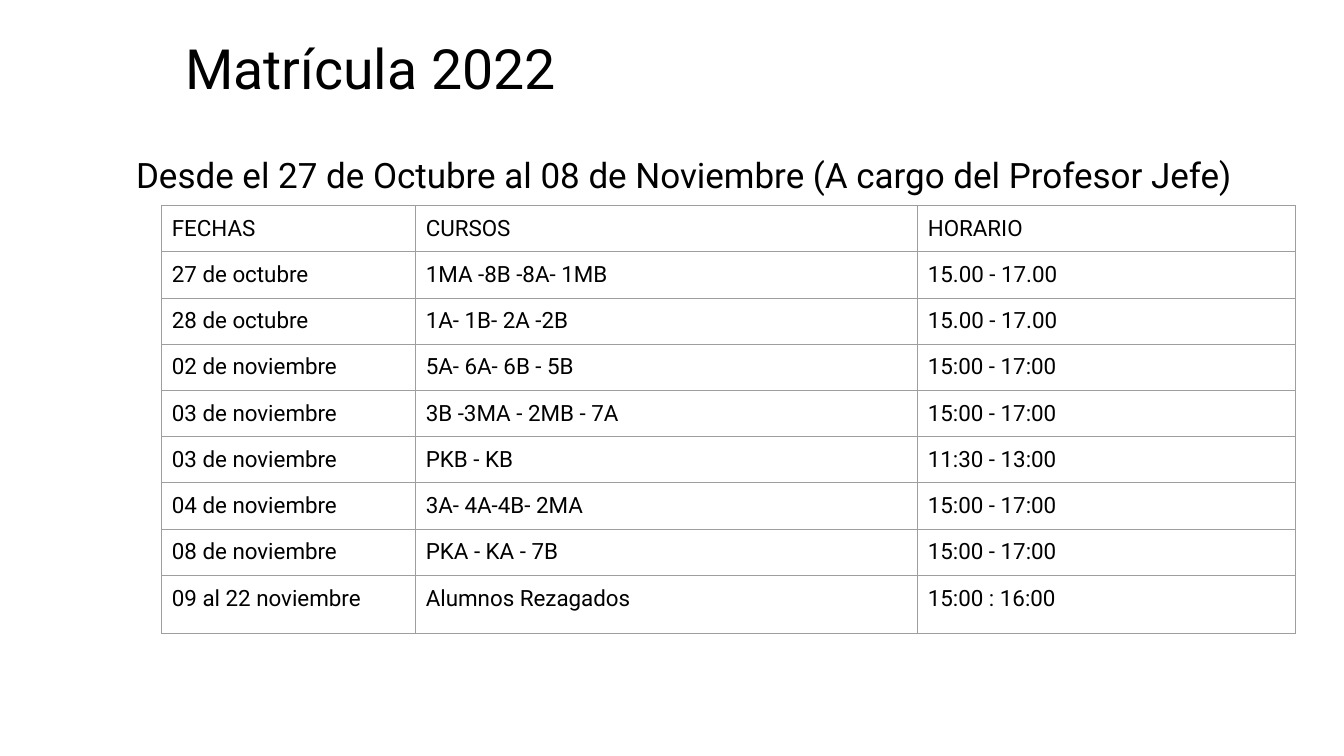
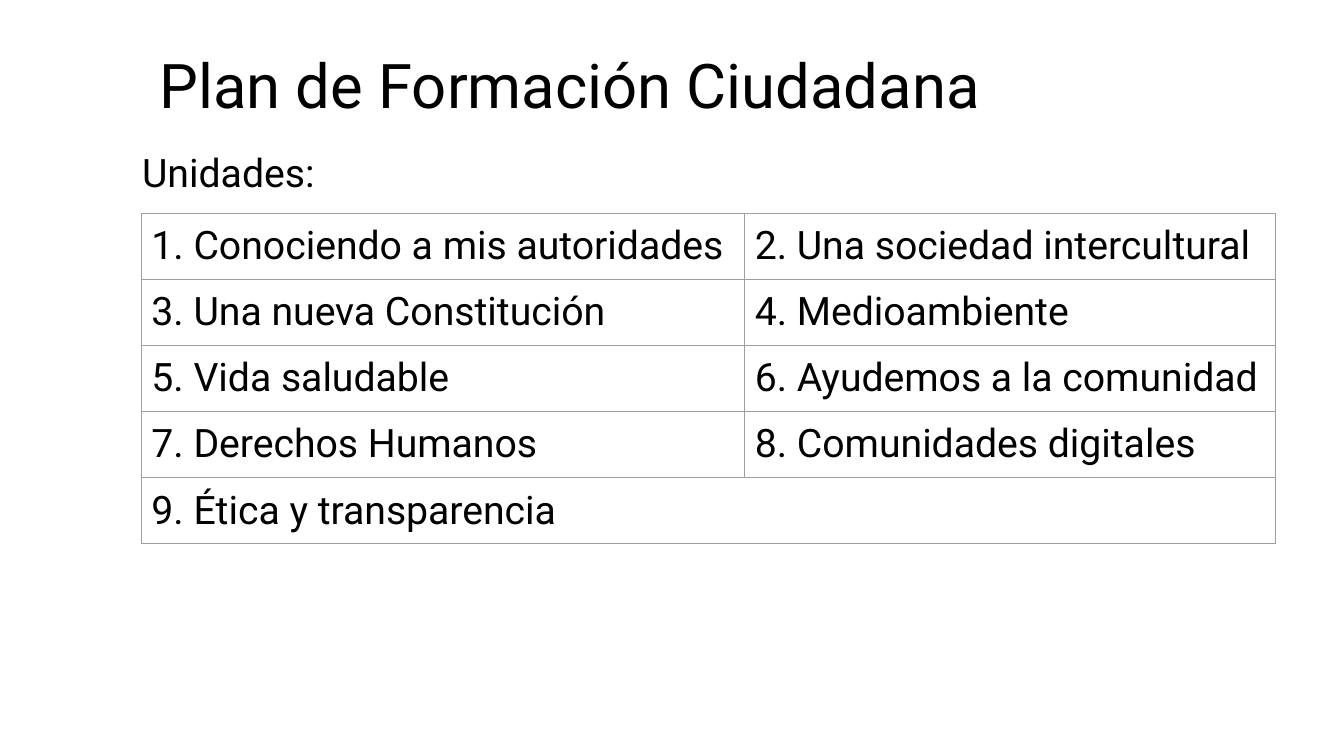
from lxml.etree import SubElement
from pptx import Presentation
from pptx.dml.color import RGBColor
from pptx.enum.text import MSO_ANCHOR as Anchor, MSO_AUTO_SIZE as AutoSize, PP_ALIGN as Align
from pptx.oxml.ns import qn
from pptx.util import Pt

FONT = "Roboto"
COLORS = {"text": "000000", "border": "9E9E9E", "paper": "FFFFFF"}
CELL_INSET = 7.2
BORDER_WIDTH = 0.75

SLIDES = [
    {
        "title": ("Matrícula 2022", (125, 28.8, 800, 44), 39.6),
        "body": ("Desde el 27 de Octubre al 08 de Noviembre (A cargo del Profesor Jefe)",
                 (90, 109.4, 828, 36), 25),
        "table": {
            "at": (115.6, 146.8),
            "columns": (181.4, 358.6, 270),
            "heights": [33] * 8 + [41.6],
            "size": 16,
            "rows": [
                ("FECHAS", "CURSOS", "HORARIO"),
                ("27 de octubre", "1MA -8B -8A- 1MB", "15.00 - 17.00"),
                ("28 de octubre", "1A- 1B- 2A -2B", "15.00 - 17.00"),
                ("02 de noviembre", "5A- 6A- 6B - 5B", "15:00 - 17:00"),
                ("03 de noviembre", "3B -3MA - 2MB - 7A", "15:00 - 17:00"),
                ("03 de noviembre", "PKB - KB", "11:30 - 13:00"),
                ("04 de noviembre", "3A- 4A-4B- 2MA", "15:00 - 17:00"),
                ("08 de noviembre", "PKA - KA - 7B", "15:00 - 17:00"),
                ("09 al 22 noviembre", "Alumnos Rezagados", "15:00 : 16:00"),
            ],
        },
    },
    {
        "title": ("Plan de Formación Ciudadana", (106.6, 10.8, 828, 104.4), 44),
        "body": ("Unidades:", (94.3, 105.8, 810, 42), 28),
        "table": {
            "at": (101, 152.4),
            "columns": (431, 379),
            "heights": [47] * 5,
            "size": 28,
            "rows": [
                ("1. Conociendo a mis autoridades", "2. Una sociedad intercultural"),
                ("3. Una nueva Constitución", "4. Medioambiente"),
                ("5. Vida saludable", "6. Ayudemos a la comunidad"),
                ("7. Derechos Humanos", "8. Comunidades digitales"),
                ("9. Ética y transparencia",),
            ],
        },
    },
]


def write(frame, text, size, spacing=1.0):
    frame.text = text
    paragraph = frame.paragraphs[0]
    properties = paragraph._p.get_or_add_pPr()
    properties.set("marL", "0")
    properties.set("indent", "0")
    SubElement(properties, qn("a:buNone"))
    paragraph.alignment = Align.LEFT
    paragraph.line_spacing = spacing
    paragraph.space_before = Pt(0)
    font = paragraph.font
    font.name, font.size, font.bold = FONT, Pt(size), False
    font.color.rgb = RGBColor.from_string(COLORS["text"])


def fill_placeholder(shape, content, anchor):
    text, box, size = content
    shape.left, shape.top, shape.width, shape.height = map(Pt, box)
    frame = shape.text_frame
    frame.word_wrap = True
    frame.auto_size = AutoSize.NONE
    frame.vertical_anchor = anchor
    write(frame, text, size, spacing=0.9)


def format_cell(cell):
    cell.margin_left = cell.margin_right = Pt(CELL_INSET)
    cell.margin_top = cell.margin_bottom = Pt(CELL_INSET)
    cell.vertical_anchor = Anchor.TOP
    properties = cell._tc.get_or_add_tcPr()
    for side in ("a:lnL", "a:lnR", "a:lnT", "a:lnB"):
        line = SubElement(properties, qn(side), w=str(Pt(BORDER_WIDTH)))
        SubElement(SubElement(line, qn("a:solidFill")), qn("a:srgbClr"), val=COLORS["border"])
    cell.fill.solid()
    cell.fill.fore_color.rgb = RGBColor.from_string(COLORS["paper"])


def add_grid(slide, content):
    rows, columns, heights = content["rows"], content["columns"], content["heights"]
    left, top = content["at"]
    table = slide.shapes.add_table(len(rows), len(columns), Pt(left), Pt(top),
                                   Pt(sum(columns)), Pt(sum(heights))).table
    table.first_row = table.horz_banding = False
    for column, width in zip(table.columns, columns):
        column.width = Pt(width)
    for row, height in zip(table.rows, heights):
        row.height = Pt(height)
    for cell in table.iter_cells():
        format_cell(cell)
    for index, texts in enumerate(rows):
        if len(texts) < len(columns):
            table.cell(index, len(texts) - 1).merge(table.cell(index, len(columns) - 1))
        for position, text in enumerate(texts):
            write(table.cell(index, position).text_frame, text, content["size"])


def main():
    presentation = Presentation()
    presentation.slide_width, presentation.slide_height = Pt(960), Pt(540)
    for content in SLIDES:
        slide = presentation.slides.add_slide(presentation.slide_layouts[1])
        fill_placeholder(slide.shapes.title, content["title"], Anchor.MIDDLE)
        fill_placeholder(slide.placeholders[1], content["body"], Anchor.TOP)
        add_grid(slide, content["table"])
    presentation.save("out.pptx")


if __name__ == "__main__":
    main()
